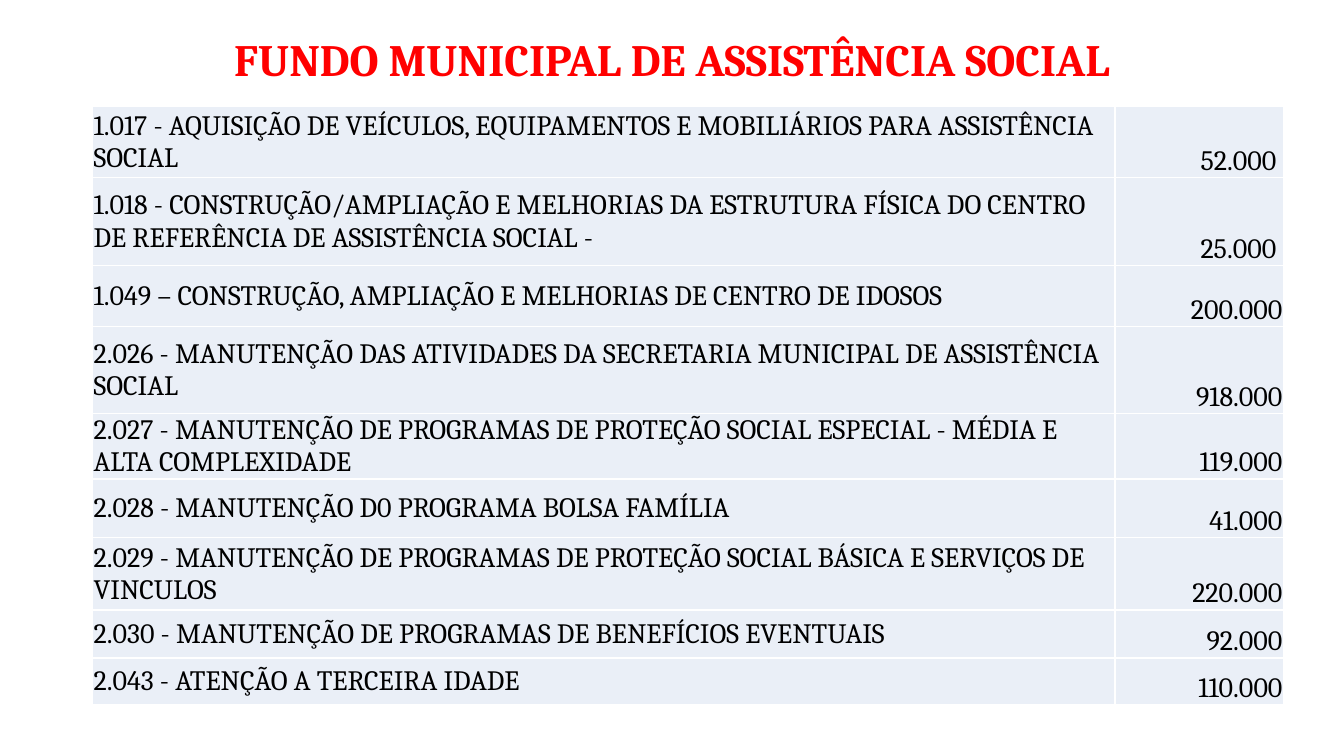
from lxml import etree
from pptx import Presentation
from pptx.dml.color import RGBColor
from pptx.enum.text import MSO_ANCHOR, PP_ALIGN
from pptx.oxml.ns import qn
from pptx.util import Cm, Pt

LEFT, CENTER, RIGHT = PP_ALIGN.LEFT, PP_ALIGN.CENTER, PP_ALIGN.RIGHT
MIDDLE, BOTTOM = MSO_ANCHOR.MIDDLE, MSO_ANCHOR.BOTTOM
FONT = "Cambria"
RED, BLACK, WHITE, PALE_BLUE = "FF0000", "000000", "FFFFFF", "EAEFF7"


def color(hex_value):
    return RGBColor.from_string(hex_value)


def write(paragraph, text, size, hex_value, alignment, bold=False):
    paragraph.alignment = alignment
    run = paragraph.add_run()
    run.text = text
    run.font.name = FONT
    run.font.size = Pt(size)
    run.font.bold = bold
    run.font.color.rgb = color(hex_value)


# Description, amount and row height in centimetres
budget_rows = [
    ("1.017 - AQUISIÇÃO DE VEÍCULOS, EQUIPAMENTOS E MOBILIÁRIOS PARA ASSISTÊNCIA SOCIAL", "52.000 ", 1.8),
    ("1.018 - CONSTRUÇÃO/AMPLIAÇÃO E MELHORIAS DA ESTRUTURA FÍSICA DO CENTRO "
     "DE REFERÊNCIA DE ASSISTÊNCIA SOCIAL -", "25.000 ", 2.21),
    ("1.049 – CONSTRUÇÃO, AMPLIAÇÃO E MELHORIAS DE CENTRO DE IDOSOS", "200.000", 1.53),
    ("2.026 - MANUTENÇÃO DAS ATIVIDADES DA SECRETARIA MUNICIPAL DE ASSISTÊNCIA SOCIAL", "918.000", 2.2),
    ("2.027 - MANUTENÇÃO DE PROGRAMAS DE PROTEÇÃO SOCIAL ESPECIAL - MÉDIA E ALTA COMPLEXIDADE", "119.000", 1.65),
    ("2.028 - MANUTENÇÃO D0 PROGRAMA BOLSA FAMÍLIA", "41.000", 1.48),
    ("2.029 - MANUTENÇÃO DE PROGRAMAS DE PROTEÇÃO SOCIAL BÁSICA E SERVIÇOS DE VINCULOS", "220.000", 1.82),
    ("2.030 - MANUTENÇÃO DE PROGRAMAS DE BENEFÍCIOS EVENTUAIS", "92.000", 1.21),
    ("2.043 - ATENÇÃO A TERCEIRA IDADE", "110.000", 1.18),
]

presentation = Presentation()
presentation.slide_width = Cm(33.87)
presentation.slide_height = Cm(19.05)
slide = presentation.slides.add_slide(presentation.slide_layouts[5])

# Title
title = slide.shapes.title
title.left, title.top, title.width, title.height = Cm(2.34), Cm(0.48), Cm(29.21), Cm(2.18)
title.text_frame.vertical_anchor = MIDDLE
title_paragraph = title.text_frame.paragraphs[0]
title_paragraph.line_spacing = 0.9
write(title_paragraph, "FUNDO MUNICIPAL DE ASSISTÊNCIA SOCIAL", 32, RED, CENTER, bold=True)

# Budget table
table_height = sum(height for _, _, height in budget_rows)
table = slide.shapes.add_table(
    len(budget_rows), 2, Cm(2.34), Cm(2.68), Cm(30), Cm(table_height)).table
table.first_row = False
table.horz_banding = False
table.columns[0].width = Cm(25.76)
table.columns[1].width = Cm(4.24)

for row, (description, amount, height) in zip(table.rows, budget_rows):
    row.height = Cm(height)
    contents = [(description, LEFT, MIDDLE), (amount, RIGHT, BOTTOM)]
    for cell, (text, alignment, anchor) in zip(row.cells, contents):
        cell.vertical_anchor = anchor
        cell.margin_left = cell.margin_right = cell.margin_top = Cm(0.02)
        cell.margin_bottom = 0
        write(cell.text_frame.paragraphs[0], text, 20, BLACK, alignment)

        # White borders, then the cell fill
        properties = cell._tc.get_or_add_tcPr()
        for side in ("a:lnL", "a:lnR", "a:lnT", "a:lnB"):
            border = etree.SubElement(properties, qn(side), w=str(Pt(1)))
            border_fill = etree.SubElement(border, qn("a:solidFill"))
            etree.SubElement(border_fill, qn("a:srgbClr"), val=WHITE)
        cell.fill.solid()
        cell.fill.fore_color.rgb = color(PALE_BLUE)

presentation.save("out.pptx")
